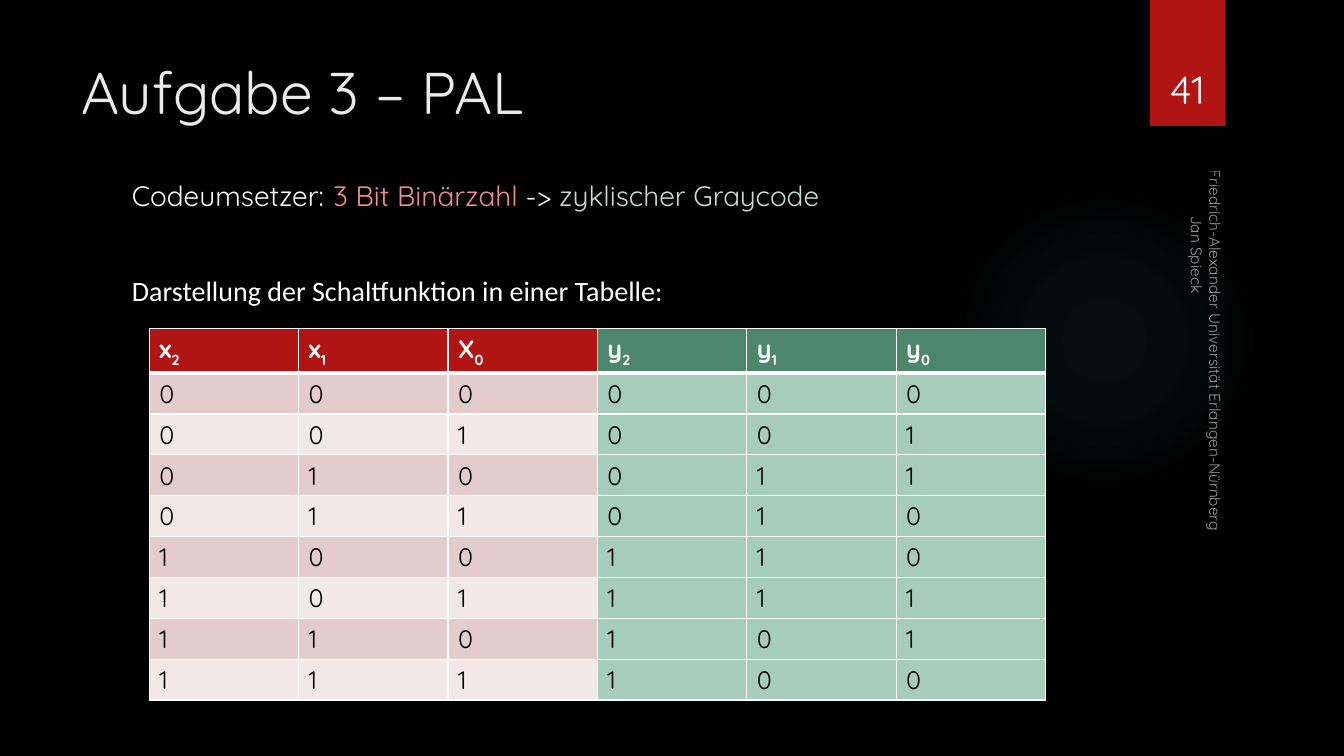
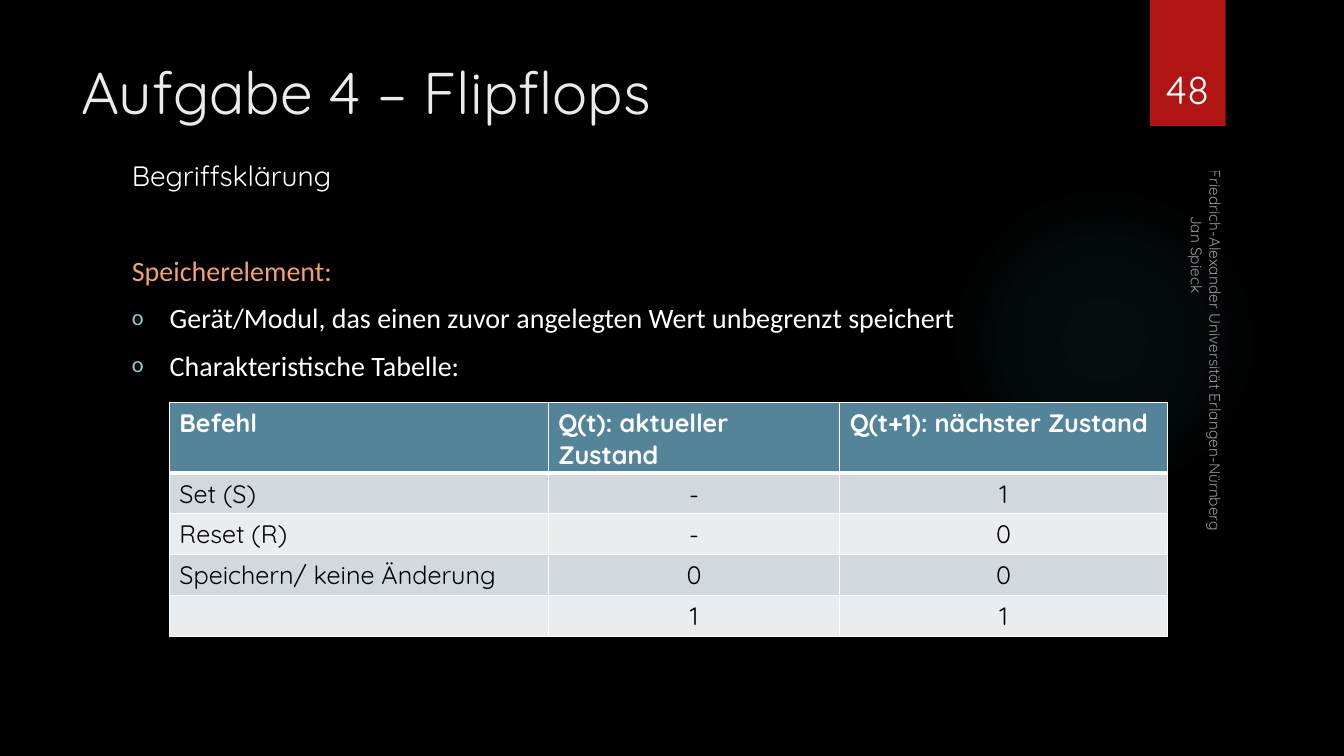
from pptx import Presentation
from pptx.dml.color import RGBColor
from pptx.enum.shapes import MSO_SHAPE
from pptx.enum.text import MSO_ANCHOR, PP_ALIGN
from pptx.oxml import parse_xml
from pptx.oxml.ns import nsdecls, qn
from pptx.util import Pt

OVAL = MSO_SHAPE.OVAL
RECTANGLE = MSO_SHAPE.RECTANGLE
TOP = MSO_ANCHOR.TOP
BOTTOM = MSO_ANCHOR.BOTTOM
LEFT = PP_ALIGN.LEFT
CENTER = PP_ALIGN.CENTER

HEADING_FONT = "Quicksand"
BODY_FONT = "Calibri"
BLACK = "000000"
WHITE = "FFFFFF"
TITLE_COLOR = "EBEBEB"
RED = "B01513"
GREEN = "4B866D"
BLUE = "54849A"
GLOW = "50B9C1"
BULLET_COLOR = "8AD0D6"
RED_BANDS = ("E4CCCC", "F2E8E7")
GREEN_BANDS = ("A6CDBC", "A6CDBC")
BLUE_BANDS = ("D1D9DE", "E9EDEF")

ROW_HEIGHT = 29.2
SECTION_GAP = 44
PARAGRAPH_GAP = 10
BULLET_INDENT = 27


def rgb(value):
    return RGBColor.from_string(value)


def format_run(run, size, color, font=HEADING_FONT, bold=False):
    run.font.size = Pt(size)
    run.font.name = font
    run.font.bold = bold
    run.font.color.rgb = rgb(color)


def add_text_box(slide, left, top, width, height, anchor=TOP):
    box = slide.shapes.add_textbox(Pt(left), Pt(top), Pt(width), Pt(height))
    box.text_frame.word_wrap = True
    box.text_frame.vertical_anchor = anchor
    return box


def add_line_of_text(slide, text, bounds, size, color, anchor=TOP, align=LEFT):
    box = add_text_box(slide, *bounds, anchor=anchor)
    box.text_frame.text = text
    paragraph = box.text_frame.paragraphs[0]
    paragraph.alignment = align
    format_run(paragraph.runs[0], size, color)


def add_plain_shape(slide, preset, left, top, width, height):
    shape = slide.shapes.add_shape(preset, Pt(left), Pt(top), Pt(width), Pt(height))
    shape.line.fill.background()
    shape.shadow.inherit = False
    return shape


def add_glow(slide):
    glow = add_plain_shape(slide, OVAL, 677.5, 131.8, 221.8, 221.8)
    stops = "".join(
        f'<a:gs pos="{position}000"><a:srgbClr val="{GLOW}">'
        f'<a:alpha val="{opacity}000"/></a:srgbClr></a:gs>'
        for position, opacity in ((0, 7), (36, 6), (69, 0))
    )
    gradient = parse_xml(
        f'<a:gradFill {nsdecls("a")}><a:gsLst>{stops}</a:gsLst>'
        '<a:path path="circle"><a:fillToRect l="50000" t="50000" r="50000" b="50000"/>'
        "</a:path></a:gradFill>"
    )
    glow._element.spPr.find(qn("a:prstGeom")).addnext(gradient)


def add_footer(slide):
    footer = add_text_box(slide, 704.9, 254.2, 303.8, 23.8, BOTTOM)
    footer.rotation = 90
    footer.text_frame.text = "Friedrich-Alexander Universität Erlangen-Nürnberg\nJan Spieck"
    for paragraph in footer.text_frame.paragraphs:
        run = paragraph.runs[0]
        format_run(run, 11, WHITE)
        color = run._r.rPr.find(qn("a:solidFill"))[0]
        color.append(parse_xml(f'<a:alpha {nsdecls("a")} val="60000"/>'))
    author = footer.text_frame.paragraphs[1]
    author._p.get_or_add_pPr().set("marL", str(Pt(33)))


def add_content_slide(deck, title, number):
    slide = deck.slides.add_slide(deck.slide_layouts[6])
    slide.background.fill.solid()
    slide.background.fill.fore_color.rgb = rgb(BLACK)
    add_glow(slide)
    band = add_plain_shape(slide, RECTANGLE, 821.5, 0, 54, 90)
    band.fill.solid()
    band.fill.fore_color.rgb = rgb(RED)
    add_line_of_text(slide, title, (51.1, 36, 740.9, 109.8), 42, TITLE_COLOR)
    add_footer(slide)
    add_line_of_text(slide, str(number), (815, 23, 66.2, 60.5), 28, WHITE, BOTTOM, CENTER)
    return slide


def add_bullet(paragraph):
    properties = paragraph._p.get_or_add_pPr()
    properties.set("marL", str(Pt(BULLET_INDENT)))
    properties.set("indent", str(-Pt(BULLET_INDENT)))
    for element in (
        f'<a:buClr {nsdecls("a")}><a:srgbClr val="{BULLET_COLOR}"/></a:buClr>',
        f'<a:buSzPct {nsdecls("a")} val="80000"/>',
        f'<a:buFont {nsdecls("a")} typeface="{BODY_FONT}"/>',
        f'<a:buChar {nsdecls("a")} char="o"/>',
    ):
        properties.append(parse_xml(element))


def add_body(slide, top, heading, section, section_color, bullets=()):
    frame = add_text_box(slide, 87.1, top, 704.2, 330.5).text_frame
    for text, color in heading:
        run = frame.paragraphs[0].add_run()
        run.text = text
        format_run(run, 20, color)
    lines = [(section, section_color, SECTION_GAP)]
    lines += [(bullet, WHITE, PARAGRAPH_GAP) for bullet in bullets]
    for text, color, gap in lines:
        paragraph = frame.add_paragraph()
        paragraph.text = text
        paragraph.space_before = Pt(gap)
        if text in bullets:
            add_bullet(paragraph)
        format_run(paragraph.runs[0], 20, color, BODY_FONT)


def set_borders(cell, row):
    widths = {
        "L": 1,
        "R": 1,
        "T": 3 if row == 1 else 1,
        "B": 3 if row == 0 else 1,
    }
    properties = cell._tc.get_or_add_tcPr()
    for side, width in widths.items():
        properties.append(parse_xml(
            f'<a:ln{side} {nsdecls("a")} w="{Pt(width)}"><a:solidFill>'
            f'<a:srgbClr val="{WHITE}"/></a:solidFill></a:ln{side}>'
        ))


def add_grid(slide, left, top, widths, rows, header_fills, bands, aligns):
    frame = slide.shapes.add_table(
        len(rows), len(widths), Pt(left), Pt(top), Pt(sum(widths)), Pt(ROW_HEIGHT * len(rows))
    )
    table = frame.table
    table.horz_banding = False
    for column, width in zip(table.columns, widths):
        column.width = Pt(width)
    for row_index, row in enumerate(rows):
        table.rows[row_index].height = Pt(ROW_HEIGHT)
        is_header = row_index == 0
        for column_index, text in enumerate(row):
            cell = table.cell(row_index, column_index)
            set_borders(cell, row_index)
            fill = header_fills[column_index] if is_header else bands[column_index][(row_index - 1) % 2]
            cell.fill.solid()
            cell.fill.fore_color.rgb = rgb(fill)
            cell.text_frame.text = text
            paragraph = cell.text_frame.paragraphs[0]
            paragraph.alignment = LEFT if is_header else aligns[column_index]
            for run in paragraph.runs:
                format_run(run, 18, WHITE if is_header else BLACK, bold=is_header)
    return table


def add_subscript(cell, index):
    run = cell.text_frame.paragraphs[0].add_run()
    run.text = str(index)
    format_run(run, 18, WHITE, bold=True)
    run._r.get_or_add_rPr().set("baseline", "-25000")


def add_gray_code_slide(deck):
    slide = add_content_slide(deck, "Aufgabe 3 – PAL", 41)
    heading = [
        ("Codeumsetzer:\t", WHITE),
        ("3 Bit Binärzahl ", "F38F8D"),
        ("-> ", WHITE),
        ("zyklischer Graycode", "C3DED3"),
    ]
    add_body(slide, 123.8, heading, "Darstellung der Schaltfunktion in einer Tabelle:", WHITE)
    codes = [f"{n:03b}{n ^ (n >> 1):03b}" for n in range(8)]
    table = add_grid(
        slide, 106.6, 234.7, [106.7] * 6, ["xxXyyy", *codes],
        [RED] * 3 + [GREEN] * 3,
        [RED_BANDS] * 3 + [GREEN_BANDS] * 3,
        [LEFT] * 6,
    )
    for column in range(6):
        add_subscript(table.cell(0, column), 2 - column % 3)


def add_flipflop_slide(deck):
    slide = add_content_slide(deck, "Aufgabe 4 – Flipflops", 48)
    bullets = (
        "Gerät/Modul, das einen zuvor angelegten Wert unbegrenzt speichert",
        "Charakteristische Tabelle:",
    )
    add_body(slide, 109.4, [("Begriffsklärung", WHITE)], "Speicherelement:", "F4A16F", bullets)
    rows = [
        ("Befehl", "Q(t): aktueller Zustand", "Q(t+1): nächster Zustand"),
        ("Set (S)", "-", "1"),
        ("Reset (R)", "-", "0"),
        ("Speichern/ keine Änderung", "0", "0"),
        ("", "1", "1"),
    ]
    add_grid(
        slide, 121, 287.3, [270.7, 208.1, 234], rows,
        [BLUE] * 3, [BLUE_BANDS] * 3, [LEFT, CENTER, CENTER],
    )


def main():
    deck = Presentation()
    deck.slide_width = Pt(960)
    deck.slide_height = Pt(540)
    add_gray_code_slide(deck)
    add_flipflop_slide(deck)
    deck.save("out.pptx")


if __name__ == "__main__":
    main()
